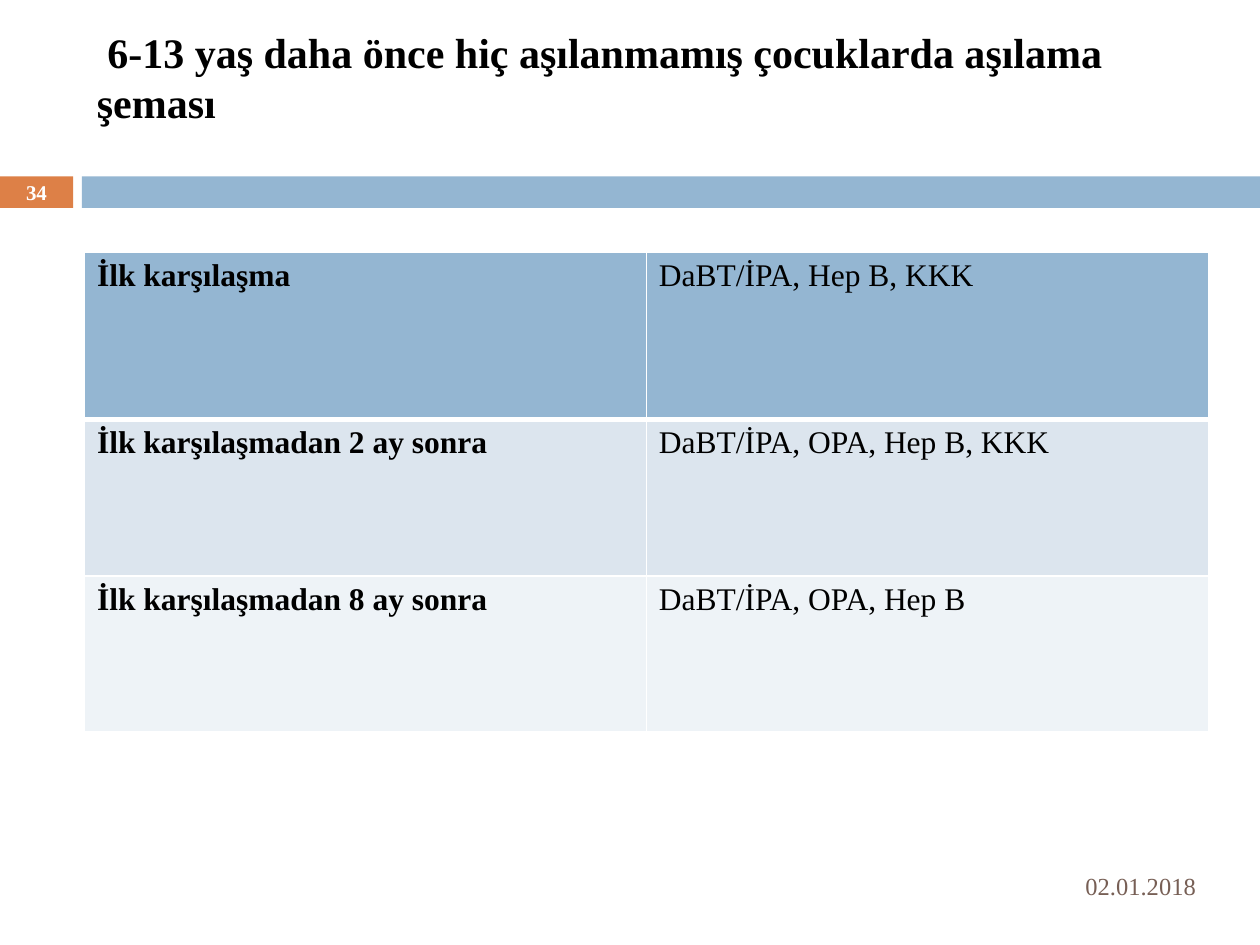
from dataclasses import dataclass

from lxml import etree
from pptx import Presentation
from pptx.dml.color import RGBColor
from pptx.enum.shapes import MSO_SHAPE
from pptx.enum.text import MSO_ANCHOR, PP_ALIGN
from pptx.oxml.ns import qn
from pptx.util import Inches, Pt

RECT = MSO_SHAPE.RECTANGLE
MIDDLE = MSO_ANCHOR.MIDDLE
LEFT, CENTER, RIGHT = PP_ALIGN.LEFT, PP_ALIGN.CENTER, PP_ALIGN.RIGHT

TITLE = " 6-13 yaş daha önce hiç aşılanmamış çocuklarda aşılama şeması"
DATE = "02.01.2018"
NUMBER = "34"
ROWS = [
    ("İlk karşılaşma", "DaBT/İPA, Hep B, KKK"),
    ("İlk karşılaşmadan 2 ay sonra", "DaBT/İPA, OPA, Hep B, KKK"),
    ("İlk karşılaşmadan 8 ay sonra", "DaBT/İPA, OPA, Hep B"),
]
HEIGHTS = [1.33, 1.24, 1.24]
EDGE, WIDTH = 0.67, 8.92


@dataclass(frozen=True)
class Theme:
    font: str = "Times New Roman"
    ink: str = "000000"
    white: str = "FFFFFF"
    brown: str = "775F55"
    orange: str = "DD8047"
    blue: str = "94B6D2"
    bands: tuple = ("94B6D2", "DCE5EE", "EEF3F7")
    title: float = 24
    body: float = 18
    date: float = 14
    number: float = 12


THEME = Theme()


def style(para, size, color, bold=False, align=LEFT):
    para.alignment = align
    font = para.font
    font.name, font.size, font.bold = THEME.font, Pt(size), bold
    font.color.rgb = RGBColor.from_string(color)


def add_bar(slide, box, color):
    bar = slide.shapes.add_shape(RECT, *map(Inches, box))
    bar.shadow.inherit = False
    bar.fill.solid()
    bar.fill.fore_color.rgb = RGBColor.from_string(color)
    bar.line.fill.background()


def add_text(slide, box, text, *look):
    frame = slide.shapes.add_textbox(*map(Inches, box)).text_frame
    frame.word_wrap = True
    frame.vertical_anchor = MIDDLE
    frame.text = text
    style(frame.paragraphs[0], *look)
    return frame


def set_edges(cell, widths):
    props = cell._tc.get_or_add_tcPr()
    for spot, (side, width) in enumerate(widths.items()):
        line = etree.Element(qn(f"a:ln{side}"), w=str(Pt(width)))
        fill = etree.SubElement(line, qn("a:solidFill"))
        etree.SubElement(fill, qn("a:srgbClr"), val=THEME.white)
        props.insert(spot, line)


def add_grid(slide):
    box = map(Inches, (EDGE, 2, WIDTH, sum(HEIGHTS)))
    table = slide.shapes.add_table(len(ROWS), len(ROWS[0]), *box).table
    for col in table.columns:
        col.width = Inches(WIDTH / len(ROWS[0]))
    for r, (texts, height) in enumerate(zip(ROWS, HEIGHTS)):
        table.rows[r].height = Inches(height)
        for c, text in enumerate(texts):
            cell = table.cell(r, c)
            cell.text = text
            style(cell.text_frame.paragraphs[0], THEME.body, THEME.ink, c == 0)
            cell.fill.solid()
            cell.fill.fore_color.rgb = RGBColor.from_string(THEME.bands[r])
            top, base = (3 if r == 1 else 1), (3 if r == 0 else 1)
            set_edges(cell, {"L": 1, "R": 1, "T": top, "B": base})


def main():
    """Build the vaccination schedule slide."""
    deck = Presentation()
    deck.slide_width, deck.slide_height = Inches(10), Inches(7.5)
    slide = deck.slides.add_slide(deck.slide_layouts[6])
    add_bar(slide, (0, 1.4, 0.58, 0.25), THEME.orange)
    add_bar(slide, (0.65, 1.4, 9.35, 0.25), THEME.blue)
    title = add_text(slide, (EDGE, 0.25, WIDTH, 1.08), TITLE,
                     THEME.title, THEME.ink, True)
    title.margin_top, title.margin_bottom = 0, Inches(0.36)
    add_text(slide, (6.67, 6.83, 2.92, 0.4), DATE,
             THEME.date, THEME.brown, False, RIGHT)
    add_text(slide, (0, 1.39, 0.58, 0.27), NUMBER,
             THEME.number, THEME.white, True, CENTER)
    add_grid(slide)
    deck.save("out.pptx")


if __name__ == "__main__":
    main()
